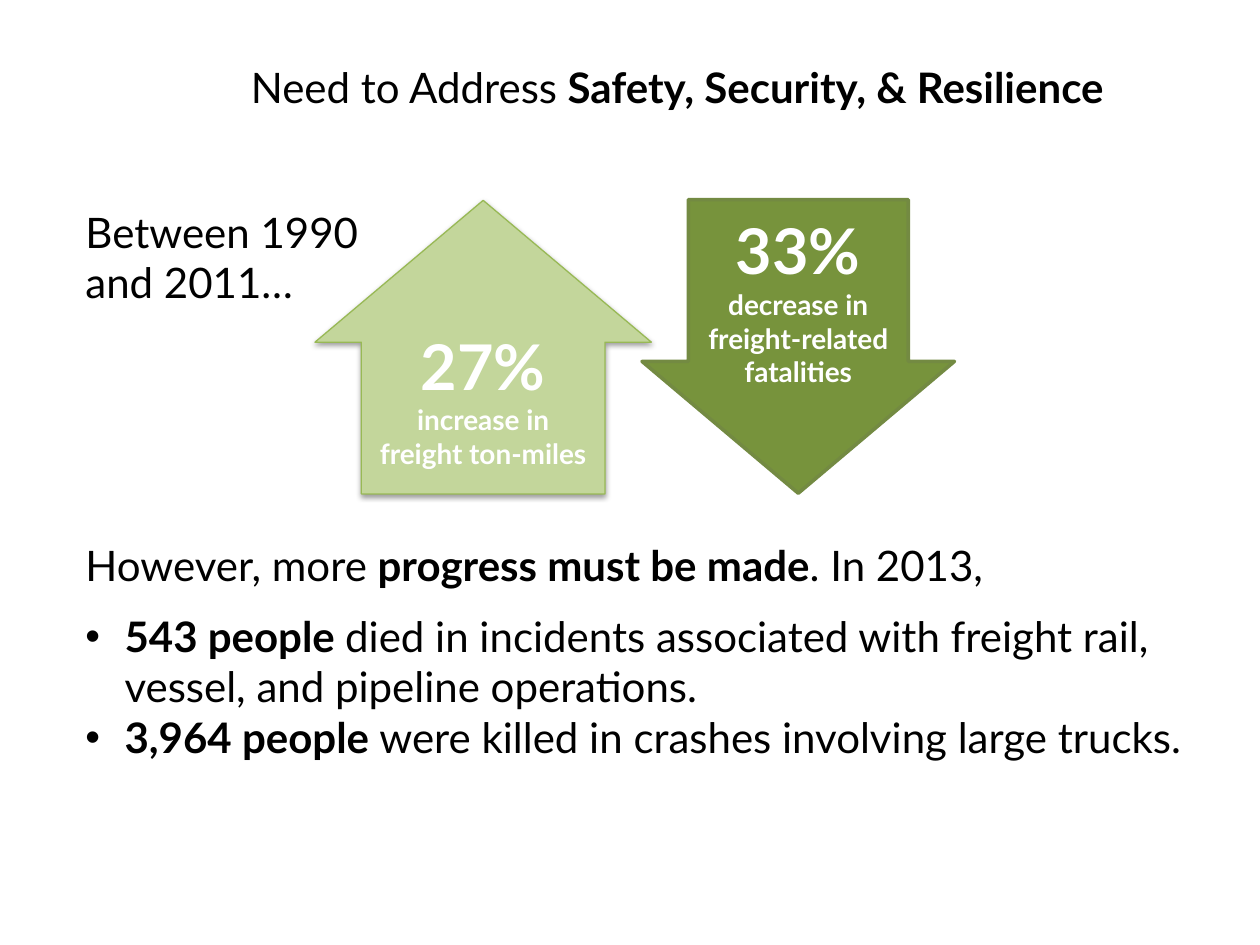
"""Build the freight safety slide with two rotated arrows and supporting text."""
import pptx
import pptx.dml.color
import pptx.enum.shapes
import pptx.enum.text
import pptx.oxml
import pptx.oxml.ns
import pptx.util

Inches = pptx.util.Inches
Pt = pptx.util.Pt
RGBColor = pptx.dml.color.RGBColor
ALIGN = pptx.enum.text.PP_ALIGN
ANCHOR = pptx.enum.text.MSO_ANCHOR
qn = pptx.oxml.ns.qn

FONT = "Lato"
BLACK = RGBColor(0x00, 0x00, 0x00)
WHITE = RGBColor(0xFF, 0xFF, 0xFF)
LIGHT_GREEN = RGBColor(0xC3, 0xD6, 0x9B)
LIGHT_EDGE = RGBColor(0x98, 0xB9, 0x55)
DARK_GREEN = RGBColor(0x77, 0x93, 0x3C)
DARK_EDGE = RGBColor(0x73, 0x8A, 0x42)

TITLE = [("Need to Address ", 24, False), ("Safety, Security, & Resilience", 24, True)]
PERIOD = [[("Between 1990", 24, False)], [("and 2011…", 24, False)]]
PROGRESS = [("However, more ", 24, False), ("progress must be made", 24, True),
            (". In 2013,", 24, False)]
DEATHS = [
    [("543 people ", 24, True),
     ("died in incidents associated with freight rail, vessel, and pipeline operations.", 24, False)],
    [("3,964 people ", 24, True),
     ("were killed in crashes involving large trucks.", 24, False)],
]
ARROWS = [
    dict(place=(2.67, 1.42, 2.33, 2.67), rotation=270, vert="vert", adjust=(0.724, 0.483),
         fill=LIGHT_GREEN, edge=LIGHT_EDGE, weight=0.75, shadow=True,
         runs=[("27% ", 36, True), ("increase in freight ton-miles", 16, True)]),
    dict(place=(5.17, 1.51, 2.33, 2.48), rotation=90, vert="vert270", adjust=(0.704, 0.449),
         fill=DARK_GREEN, edge=DARK_EDGE, weight=2, shadow=False,
         runs=[("33%", 36, True), (" ", 18, False),
               ("decrease in freight-related fatalities", 16, True)]),
]
SHADOW = (
    '<a:outerShdw xmlns:a="http://schemas.openxmlformats.org/drawingml/2006/main" '
    'blurRad="40000" dist="20000" dir="5400000" rotWithShape="0">'
    '<a:srgbClr val="000000"><a:alpha val="38000"/></a:srgbClr></a:outerShdw>'
)


def write(para, runs, color=BLACK, align=ALIGN.LEFT, bullet=False, before=0):
    properties = para._p.get_or_add_pPr()
    if bullet:
        properties.set("marL", str(Inches(0.31)))
        properties.set("indent", str(-Inches(0.31)))
        font = properties.makeelement(qn("a:buFont"), {"typeface": "Arial"})
        mark = properties.makeelement(qn("a:buChar"), {"char": "•"})
        properties.extend([font, mark])
    para.alignment = align
    if before:
        para.space_before = Pt(before)
    for text, size, bold in runs:
        span = para.add_run()
        span.text = text
        span.font.name = FONT
        span.font.size = Pt(size)
        span.font.bold = bold
        span.font.color.rgb = color


def add_text(page, place, paragraphs):
    box = page.shapes.add_textbox(*map(Inches, place))
    frame = box.text_frame
    frame.word_wrap = True
    for number, (runs, options) in enumerate(paragraphs):
        para = frame.add_paragraph() if number else frame.paragraphs[0]
        write(para, runs, **options)


def add_arrow(page, place, rotation, vert, adjust, fill, edge, weight, shadow, runs):
    arrow = page.shapes.add_shape(
        pptx.enum.shapes.MSO_SHAPE.RIGHT_ARROW, *map(Inches, place))
    arrow.rotation = rotation
    for number, value in enumerate(adjust):
        arrow.adjustments[number] = value
    arrow.fill.solid()
    arrow.fill.fore_color.rgb = fill
    arrow.line.color.rgb = edge
    arrow.line.width = Pt(weight)
    arrow.shadow.inherit = False
    if shadow:
        effects = arrow._element.spPr.find(qn("a:effectLst"))
        effects.append(pptx.oxml.parse_xml(SHADOW))
    frame = arrow.text_frame
    frame.word_wrap = True
    frame.vertical_anchor = ANCHOR.MIDDLE
    frame._txBody.bodyPr.set("vert", vert)
    write(frame.paragraphs[0], runs, color=WHITE, align=ALIGN.CENTER)


def main():
    deck = pptx.Presentation()
    deck.slide_width, deck.slide_height = Inches(10), Inches(7.5)
    page = deck.slides.add_slide(deck.slide_layouts[5])

    title = page.shapes.title
    title.left, title.top, title.width, title.height = map(Inches, (0.75, 0.44, 9.25, 0.56))
    title.text_frame.auto_size = pptx.enum.text.MSO_AUTO_SIZE.NONE
    title.text_frame.vertical_anchor = ANCHOR.TOP
    write(title.text_frame.paragraphs[0], TITLE, align=ALIGN.CENTER)

    add_text(page, (0.58, 1.59, 7.33, 0.91), [(runs, {}) for runs in PERIOD])
    for arrow in ARROWS:
        add_arrow(page, **arrow)
    bullets = [(runs, dict(bullet=True, before=0 if number else 12))
               for number, runs in enumerate(DEATHS)]
    add_text(page, (0.58, 4.23, 9.42, 2.19), [(PROGRESS, {})] + bullets)
    deck.save("out.pptx")


if __name__ == "__main__":
    main()
